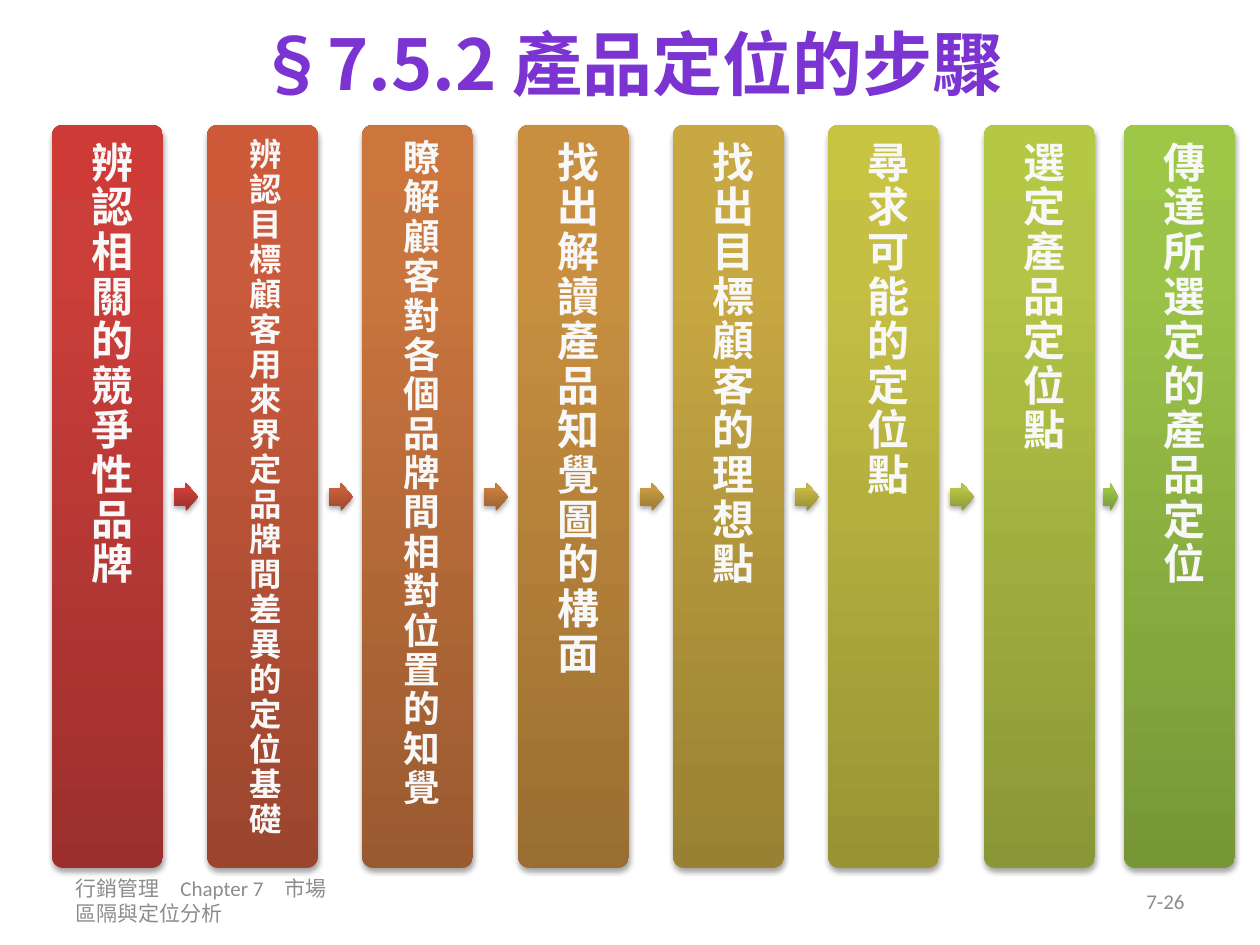
from lxml.etree import SubElement
from pptx import Presentation
from pptx.dml.color import RGBColor
from pptx.enum.shapes import MSO_SHAPE as Shape
from pptx.enum.text import MSO_ANCHOR as Anchor, PP_ALIGN as Align
from pptx.oxml.ns import qn
from pptx.util import Pt

PX = 914400 / 126
TITLE_OUTLINE = RGBColor(0x5E, 0x45, 0x7C)
FOOTER_GREY = RGBColor(0x8C, 0x8C, 0x8C)
STEP_TEXT = RGBColor(0xF8, 0xF8, 0xF8)
SHADOW = RGBColor(0, 0, 0)
TITLE_STOPS = [(0, RGBColor(0x3D, 0x1B, 0x67)), (43, RGBColor(0x7B, 0x34, 0xD2)),
               (48, RGBColor(0x73, 0x30, 0xC4)), (100, RGBColor(0x3D, 0x1B, 0x67))]
BAR_COLORS = [[RGBColor.from_string(c) for c in row.split()] for row in (
    "9C2F2D CB3E3A CE3B37", "9B452E CA5A3C CD5939", "9A5A30 C9753E CC753C",
    "9A6E31 C88F40 CB903E", "998133 C7A842 CAAA40", "989434 C5C044 C9C342",
    "8A9736 B3C446 B5C844", "779737 9BC348 9DC746")]
ARROW_COLORS = [[RGBColor.from_string(c) for c in row.split()] for row in (
    "9C2F2D CB3E3A CE3B37", "9B492E C95F3C CD5E3A", "9A6130 C87E3F CC7E3C",
    "997832 C79C41 CB9D3F", "988E34 C6B843 C9BB41", "8D9736 B7C546 B9C844",
    "779737 9BC348 9DC746")]
STEPS = [
    ("辨認相關的競爭性品牌", 24, 13),
    ("辨認目標顧客用來界定品牌間差異的定位基礎", 18.5, 10),
    ("瞭解顧客對各個品牌間相對位置的知覺", 21, 11),
    ("找出解讀產品知覺圖的構面", 24, 13),
    ("找出目標顧客的理想點", 24, 13),
    ("尋求可能的定位點", 24, 13),
    ("選定產品定位點", 24, 13),
    ("傳達所選定的產品定位", 24, 13),
]


def set_gradient(fill, parent, stops, angle):
    fill.gradient()
    fill.gradient_angle = angle
    stop_list = parent.find(qn("a:gradFill")).find(qn("a:gsLst"))
    for old_stop in list(stop_list):
        stop_list.remove(old_stop)
    for position, color in stops:
        stop = SubElement(stop_list, qn("a:gs"), pos=str(position * 1000))
        SubElement(stop, qn("a:srgbClr"), val=str(color))


def add_glossy(preset, box, adjustments, colors):
    glossy = slide.shapes.add_shape(preset, *[round(v * PX) for v in box])
    for index, value in enumerate(adjustments):
        glossy.adjustments[index] = value
    properties = glossy._element.spPr
    set_gradient(glossy.fill, properties, zip((0, 80, 100), colors), 90)
    glossy.line.fill.background()
    glossy.shadow.inherit = False
    shadow = SubElement(properties.find(qn("a:effectLst")), qn("a:outerShdw"),
                        blurRad=str(Pt(3.1)), dist=str(Pt(1.8)),
                        dir="5400000", rotWithShape="0")
    shadow_color = SubElement(shadow, qn("a:srgbClr"), val=str(SHADOW))
    SubElement(shadow_color, qn("a:alpha"), val="35000")
    return glossy


prs = Presentation()
prs.slide_width = round(1260 * PX)
prs.slide_height = round(945 * PX)
slide = prs.slides.add_slide(prs.slide_layouts[5])

title = slide.shapes.title
title.left, title.top, title.width, title.height = [
    round(v * PX) for v in (63, 0, 1134, 125)]
title.text_frame.vertical_anchor = Anchor.MIDDLE
heading = title.text_frame.paragraphs[0]
heading.text = "§7.5.2 產品定位的步驟"
heading.alignment = Align.CENTER
heading.font.size = Pt(40)
heading.font.bold = True
heading.font.name = "Noto Sans CJK SC"
heading_props = heading.font._element
SubElement(heading_props, qn("a:ea"), typeface="Noto Sans CJK SC")
set_gradient(heading.font.fill, heading_props, TITLE_STOPS, 270)
outline = SubElement(heading_props, qn("a:ln"), w=str(Pt(0.71)))
outline_fill = SubElement(outline, qn("a:solidFill"))
SubElement(outline_fill, qn("a:srgbClr"), val=str(TITLE_OUTLINE))
heading_props.insert(0, outline)

for text, left, alignment in (
        ("行銷管理　Chapter 7　市場區隔與定位分析", 63, Align.LEFT),
        ("7-26", 903, Align.RIGHT)):
    footer = slide.shapes.add_textbox(*[round(v * PX) for v in (left, 876, 294, 50)])
    footer.text_frame.word_wrap = True
    footer.text_frame.vertical_anchor = Anchor.MIDDLE
    line = footer.text_frame.paragraphs[0]
    line.text = text
    line.alignment = alignment
    line.font.size = Pt(12)
    line.font.name = "Calibri"
    line.font.color.rgb = FOOTER_GREY

last = len(STEPS) - 1
for i, (text, size, inset) in enumerate(STEPS):
    left = 1124 if i == last else 52 + i * 466 // 3
    bar = add_glossy(Shape.ROUNDED_RECTANGLE, (left, 125, 111, 743), [0.1], BAR_COLORS[i])
    frame = bar.text_frame
    frame.word_wrap = True
    frame.vertical_anchor = Anchor.MIDDLE
    frame.margin_left = frame.margin_right = round(inset * PX)
    frame.margin_top = frame.margin_bottom = round(inset * PX)
    frame._txBody.bodyPr.set("vert", "eaVert")
    step = frame.paragraphs[0]
    step.text = text
    step.alignment = Align.LEFT
    step.line_spacing = 0.9
    step.font.size = Pt(size)
    step.font.bold = True
    step.font.color.rgb = STEP_TEXT
    step.font.name = "Noto Sans CJK SC"
    step.font._element.set("spc", "150")
    SubElement(step.font._element, qn("a:ea"), typeface="Noto Sans CJK SC")
    if i < last:
        arrow_left, arrow_width = (1103, 15) if i == last - 1 else (left + 122, 24)
        add_glossy(Shape.RIGHT_ARROW, (arrow_left, 483, arrow_width, 28),
                   [0.6, 0.5], ARROW_COLORS[i])

prs.save("out.pptx")
